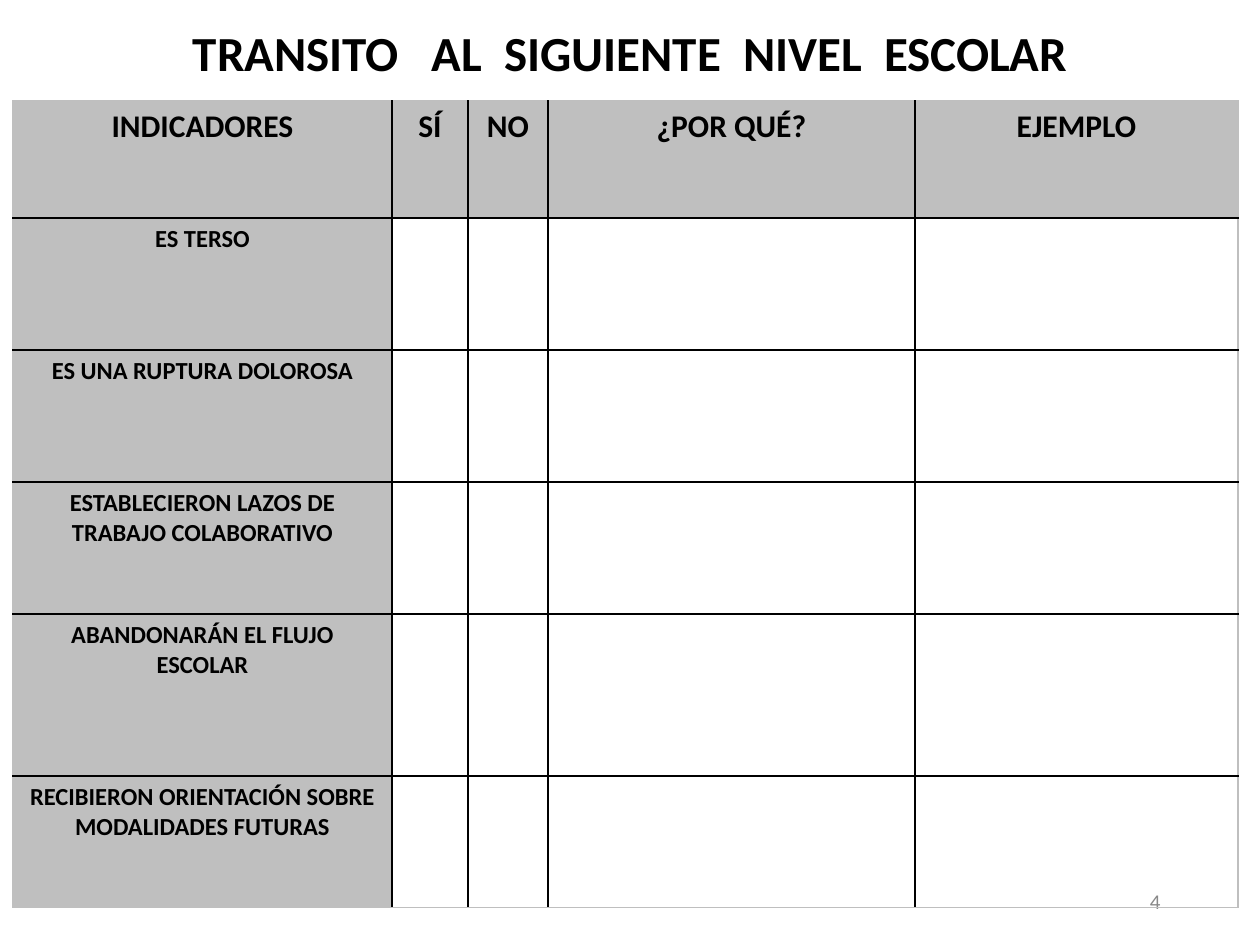
"""Build the school transition checklist slide."""
from lxml import etree
from pptx import Presentation
from pptx import util as u
from pptx.dml.color import RGBColor
from pptx.enum import text
from pptx.oxml.ns import qn

PX = u.Inches(1) // 126
COLORS = {"ink": "000000", "header": "BFBFBF", "number": "898989"}
HEADINGS = ["INDICADORES", "SÍ", "NO", "¿POR QUÉ?", "EJEMPLO"]
INDICATORS = [
    "ES TERSO",
    "ES UNA RUPTURA DOLOROSA",
    "ESTABLECIERON LAZOS DE TRABAJO COLABORATIVO",
    "ABANDONARÁN EL FLUJO ESCOLAR",
    "RECIBIERON ORIENTACIÓN SOBRE MODALIDADES FUTURAS",
]
WIDTHS = [379, 76, 80, 367, 323]
HEIGHTS = [117, 132, 132, 132, 162, 132]


def write(frame, words, size, color, align, bold=True):
    frame.word_wrap = True
    line = frame.paragraphs[0]
    line.text = words
    line.alignment = align
    line.font.name = "Calibri"
    line.font.size = u.Pt(size)
    line.font.bold = bold
    line.font.color.rgb = RGBColor.from_string(COLORS[color])
    return line


def add_border(cell, side, color):
    edge = etree.SubElement(cell._tc.get_or_add_tcPr(), qn(f"a:{side}"), w=str(u.Pt(1)))
    fill = etree.SubElement(edge, qn("a:solidFill"))
    etree.SubElement(fill, qn("a:srgbClr"), val=COLORS[color])


prs = Presentation()
prs.slide_width, prs.slide_height = 1260 * PX, 945 * PX
slide = prs.slides.add_slide(prs.slide_layouts[6])

title = slide.shapes.add_textbox(0, 0, 1260 * PX, 88 * PX).text_frame
title.vertical_anchor = text.MSO_ANCHOR.BOTTOM
heading = write(title, "TRANSITO   AL  SIGUIENTE  NIVEL  ESCOLAR", 28, "ink", text.PP_ALIGN.CENTER)
heading.line_spacing = 0.9

number = slide.shapes.add_textbox(890 * PX, 876 * PX, 283 * PX, 50 * PX).text_frame
number.vertical_anchor = text.MSO_ANCHOR.MIDDLE
write(number, "4", 12, "number", text.PP_ALIGN.RIGHT, bold=False)

checklist = slide.shapes.add_table(
    len(HEIGHTS), len(WIDTHS), 13 * PX, 101 * PX, sum(WIDTHS) * PX, sum(HEIGHTS) * PX
).table
checklist.horz_banding = False
for column, width in zip(checklist.columns, WIDTHS):
    column.width = width * PX
for row, height in zip(checklist.rows, HEIGHTS):
    row.height = height * PX

last_row, last_column = len(HEIGHTS) - 1, len(WIDTHS) - 1
for r in range(len(HEIGHTS)):
    for c in range(len(WIDTHS)):
        cell = checklist.cell(r, c)
        outer = {"lnL": c == 0, "lnR": c == last_column, "lnT": r == 0, "lnB": r == last_row}
        for side, is_outer in outer.items():
            add_border(cell, side, "header" if is_outer else "ink")
        if r == 0 or c == 0:
            cell.fill.solid()
            cell.fill.fore_color.rgb = RGBColor.from_string(COLORS["header"])
            words = HEADINGS[c] if r == 0 else INDICATORS[r - 1]
            write(cell.text_frame, words, 18 if r == 0 else 14, "ink", text.PP_ALIGN.CENTER)
        else:
            cell.fill.background()

prs.save("out.pptx")
